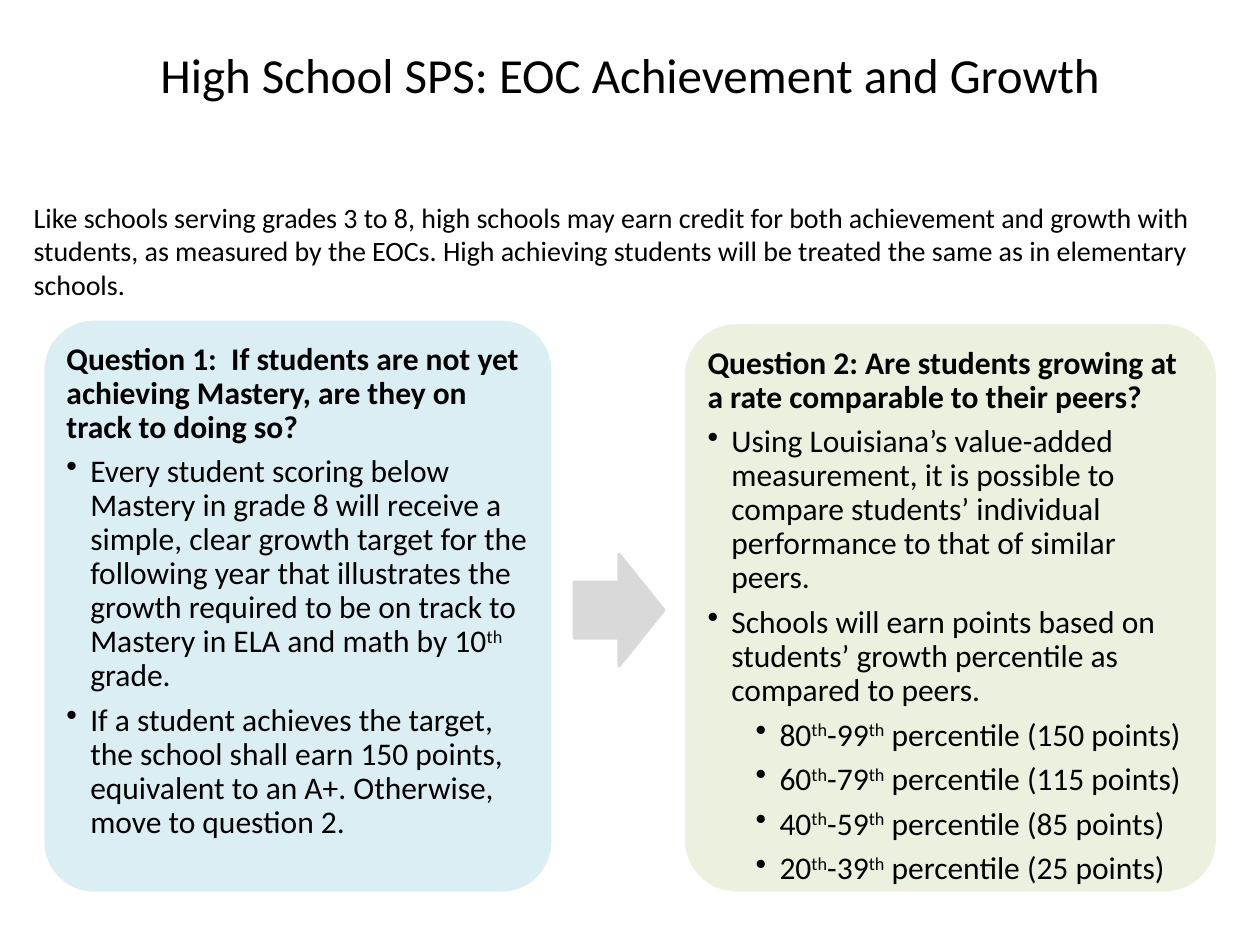
from lxml import etree
from pptx import Presentation
from pptx.dml.color import RGBColor
from pptx.enum import shapes, text
from pptx.oxml.ns import qn
from pptx.util import Cm, Pt

COLOURS = {"text": "000000", "outline": "FFFFFF", "arrow": "D9D9D9",
           "blue": "DBEEF4", "green": "EBF1DE"}
FONT = "Calibri"
TITLE = "High School SPS: EOC Achievement and Growth"
INTRO = ("Like schools serving grades 3 to 8, high schools may earn credit for both "
         "achievement and growth with students, as measured by the EOCs. High achieving "
         "students will be treated the same as in elementary schools.")

# Text between carets is raised.
PERCENTILES = [(80, 99, 150), (60, 79, 115), (40, 59, 85), (20, 39, 25)]
QUESTIONS = [
    {"fill": "blue", "box": (0.86, 6.43, 10.29, 11.58),
     "heading": "Question 1:  If students are not yet achieving Mastery, "
                "are they on track to doing so?",
     "points": [
         (1, "Every student scoring below Mastery in grade 8 will receive a simple, clear "
             "growth target for the following year that illustrates the growth required to "
             "be on track to Mastery in ELA and math by 10^th^ grade."),
         (1, "If a student achieves the target, the school shall earn 150 points, "
             "equivalent to an A+. Otherwise, move to question 2.")]},
    {"fill": "green", "box": (13.77, 6.5, 10.78, 11.51),
     "heading": "Question 2: Are students growing at a rate comparable to their peers?",
     "points": [
         (1, "Using Louisiana’s value-added measurement, it is possible to compare "
             "students’ individual performance to that of similar peers."),
         (1, "Schools will earn points based on students’ growth percentile as compared "
             "to peers.")]
         + [(2, f"{low}^th^-{high}^th^ percentile ({score} points)")
            for low, high, score in PERCENTILES]},
]
ARROW_BOX = (11.58, 11.18, 1.8, 2.24)
INDENTS = {1: Cm(0.48), 2: Cm(1.45)}
CORNER = 0.1
CARD_INSET = Cm(0.18)


def colour(name):
    return RGBColor.from_string(COLOURS[name])


def set_font(paragraph, size, bold=False):
    font = paragraph.font
    font.name, font.size, font.bold = FONT, Pt(size), bold
    font.color.rgb = colour("text")


def add_bullet(paragraph, level):
    paragraph.level = level
    properties = paragraph._p.get_or_add_pPr()
    properties.set("marL", str(INDENTS[level]))
    properties.set("indent", str(-INDENTS[1]))
    etree.SubElement(properties, qn("a:buChar")).set("char", "•")


def add_runs(paragraph, content):
    for i, part in enumerate(content.split("^")):
        run = paragraph.add_run()
        run.text = part
        if i % 2:
            run._r.get_or_add_rPr().set("baseline", "30000")


def add_flat_shape(slide, kind, box, fill, line):
    shape = slide.shapes.add_shape(kind, *map(Cm, box))
    shape.shadow.inherit = False
    shape.fill.solid()
    shape.fill.fore_color.rgb = colour(fill)
    shape.line.color.rgb = colour(line)
    shape.line.width = Pt(2)
    return shape


def add_question(slide, question):
    card = add_flat_shape(slide, shapes.MSO_SHAPE.ROUNDED_RECTANGLE,
                          question["box"], question["fill"], "outline")
    card.adjustments[0] = CORNER
    frame = card.text_frame
    frame.word_wrap = True
    frame.vertical_anchor = text.MSO_ANCHOR.TOP
    frame.margin_left = frame.margin_right = CARD_INSET
    frame.margin_top = frame.margin_bottom = CARD_INSET
    for level, content in [(0, question["heading"])] + question["points"]:
        paragraph = frame.add_paragraph() if level else frame.paragraphs[0]
        if level:
            add_bullet(paragraph, level)
        paragraph.alignment = text.PP_ALIGN.LEFT
        paragraph.line_spacing = 0.9
        paragraph.space_after = Pt(6)
        set_font(paragraph, 18, bold=level == 0)
        add_runs(paragraph, content)


def main():
    deck = Presentation()
    deck.slide_width, deck.slide_height = Cm(25.4), Cm(19.05)
    slide = deck.slides.add_slide(deck.slide_layouts[5])

    title = slide.shapes.title
    title.left, title.top, title.width, title.height = 0, 0, deck.slide_width, Cm(2.97)
    title.text_frame.text = TITLE
    title.text_frame.vertical_anchor = text.MSO_ANCHOR.MIDDLE
    title.text_frame.paragraphs[0].alignment = text.PP_ALIGN.CENTER
    set_font(title.text_frame.paragraphs[0], 28)

    intro = slide.shapes.add_textbox(Cm(0.43), Cm(3.91), Cm(24.56), Cm(10.59)).text_frame
    intro.word_wrap = True
    intro.text = INTRO
    set_font(intro.paragraphs[0], 16)

    for question in QUESTIONS:
        add_question(slide, question)
    add_flat_shape(slide, shapes.MSO_SHAPE.RIGHT_ARROW, ARROW_BOX, "arrow", "arrow")
    deck.save("out.pptx")


if __name__ == "__main__":
    main()
